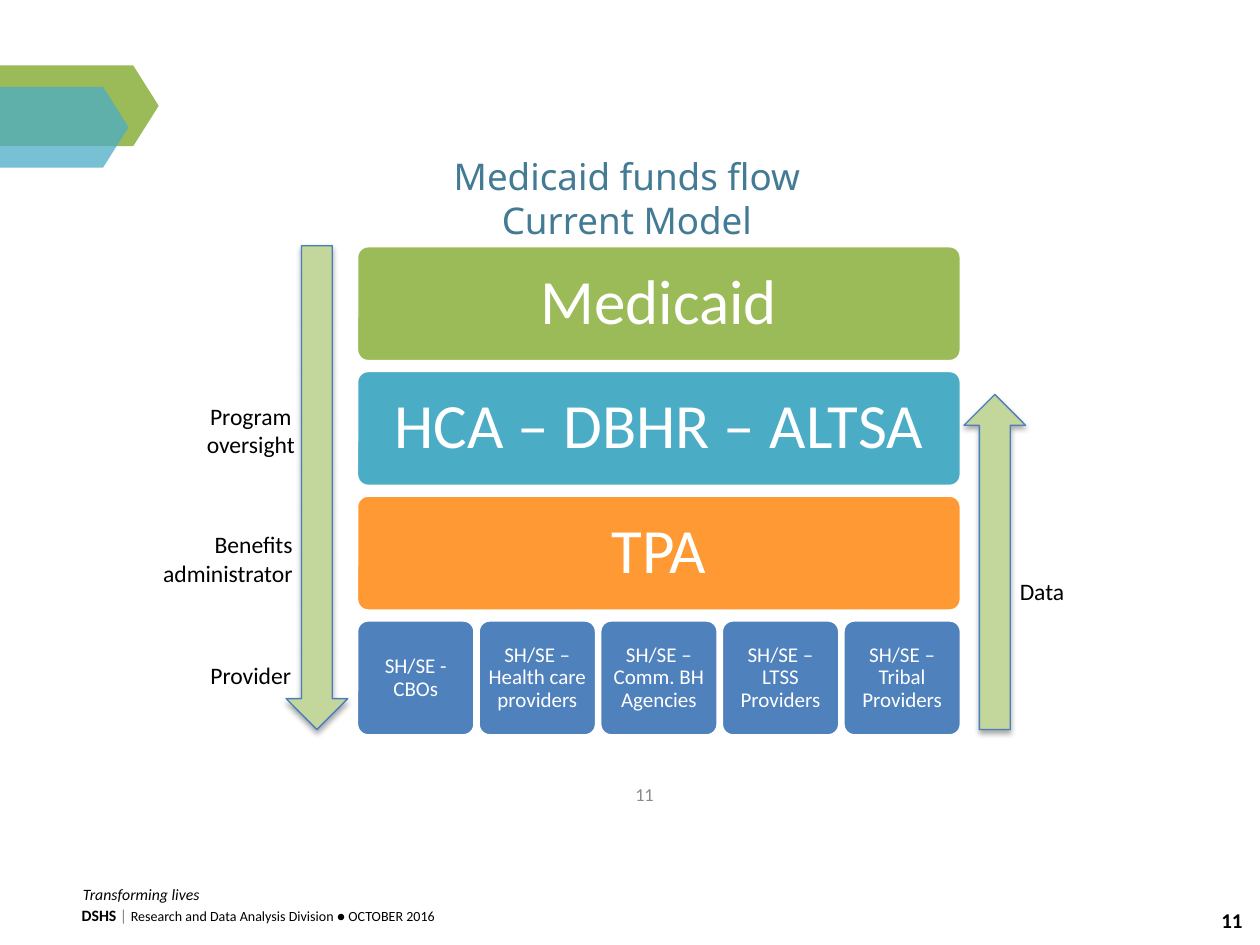
from lxml.etree import SubElement
from pptx import Presentation
from pptx.dml.color import RGBColor
from pptx.enum.shapes import MSO_SHAPE
from pptx.enum.text import MSO_ANCHOR, PP_ALIGN
from pptx.oxml.ns import qn
from pptx.util import Inches, Pt

BLACK, WHITE = "000000", "FFFFFF"
STACK_LEFT, STACK_TOP = 2.83, 1.95
STACK_WIDTH, LEVEL_HEIGHT, LEVEL_STEP = 4.8, 0.92, 0.99
PROVIDER_WIDTH = 0.94

LEVELS = [
    ("Medicaid", "9BBB59"),
    ("HCA – DBHR – ALTSA", "4BACC6"),
    ("TPA", "FF9933"),
]
PROVIDERS = [
    "SH/SE - CBOs",
    "SH/SE – Health care providers",
    "SH/SE – Comm. BH Agencies",
    "SH/SE – LTSS Providers",
    "SH/SE – Tribal Providers",
]


def rgb(color):
    return RGBColor.from_string(color)


def style_font(font, size, color, name="Calibri", bold=False, italic=False):
    font.name = name
    font.size = Pt(size)
    font.color.rgb = rgb(color)
    font.bold = bold
    font.italic = italic


def add_text(slide, box, text, size, color=BLACK, align=PP_ALIGN.LEFT,
             anchor=MSO_ANCHOR.TOP, **font_style):
    frame = slide.shapes.add_textbox(*map(Inches, box)).text_frame
    frame.word_wrap = True
    frame.vertical_anchor = anchor
    paragraph = frame.paragraphs[0]
    paragraph.text = text
    paragraph.alignment = align
    style_font(paragraph.font, size, color, **font_style)


def add_filled_shape(slide, kind, box, fill, line=None, line_width=0.75):
    shape = slide.shapes.add_shape(kind, *map(Inches, box))
    shape.shadow.inherit = False
    shape.fill.solid()
    shape.fill.fore_color.rgb = rgb(fill)
    if line:
        shape.line.color.rgb = rgb(line)
        shape.line.width = Pt(line_width)
    else:
        shape.line.fill.background()
    return shape


def add_block(slide, box, text, fill, size, inset):
    """Add one rounded block of the funding stack."""
    block = add_filled_shape(slide, MSO_SHAPE.ROUNDED_RECTANGLE, box, fill, WHITE, 2)
    block.adjustments[0] = 0.1
    frame = block.text_frame
    frame.word_wrap = True
    frame.vertical_anchor = MSO_ANCHOR.MIDDLE
    frame.margin_left = frame.margin_right = Inches(inset)
    frame.margin_top = frame.margin_bottom = Inches(inset)
    paragraph = frame.paragraphs[0]
    paragraph.text = text
    paragraph.alignment = PP_ALIGN.CENTER
    paragraph.line_spacing = 0.9
    style_font(paragraph.font, size, WHITE)


def add_flow_arrow(slide, box, rotation=0):
    arrow = add_filled_shape(slide, MSO_SHAPE.DOWN_ARROW, box, "C3D69B", "4B7EBC")
    arrow.rotation = rotation
    effects = arrow._element.spPr.find(qn("a:effectLst"))
    shadow = SubElement(effects, qn("a:outerShdw"), blurRad=str(Pt(3.1)),
                        dist=str(Pt(1.8)), dir="5400000", rotWithShape="0")
    shadow_color = SubElement(shadow, qn("a:srgbClr"), val=BLACK)
    SubElement(shadow_color, qn("a:alpha"), val="35000")


def add_pennants(slide):
    pennants = [((0, 0.52, 1.26, 0.64), "9BBB59"), ((0, 0.69, 1.02, 0.64), "4BACC6")]
    for box, fill in pennants:
        pennant = add_filled_shape(slide, MSO_SHAPE.PENTAGON, box, fill)
        pennant.adjustments[0] = 0.315
    front_color = pennant._element.spPr.find(qn("a:solidFill"))[0]
    SubElement(front_color, qn("a:alpha"), val="75000")


def add_footer(slide):
    add_text(slide, (9.03, 7.15, 0.93, 0.3), "11", 12, align=PP_ALIGN.RIGHT, bold=True)
    frame = slide.shapes.add_textbox(*map(Inches, (0.55, 7.14, 8.13, 0.25))).text_frame
    frame.word_wrap = True
    parts = [
        ("DSHS ", 9, BLACK, True),
        ("| ", 9, "808080", False),
        ("Research and Data Analysis Division ● OCTOBER 2016", 8, BLACK, False),
    ]
    for text, size, color, bold in parts:
        run = frame.paragraphs[0].add_run()
        run.text = text
        style_font(run.font, size, color, bold=bold)
    add_text(slide, (0.56, 6.97, 3.59, 0.25), "Transforming lives", 9, italic=True)


def add_stack(slide):
    for row, (name, fill) in enumerate(LEVELS):
        box = (STACK_LEFT, STACK_TOP + row * LEVEL_STEP, STACK_WIDTH, LEVEL_HEIGHT)
        add_block(slide, box, name, fill, 36, 0.15)
    provider_top = STACK_TOP + len(LEVELS) * LEVEL_STEP
    provider_step = (STACK_WIDTH - PROVIDER_WIDTH) / (len(PROVIDERS) - 1)
    for column, provider in enumerate(PROVIDERS):
        box = (STACK_LEFT + column * provider_step, provider_top,
               PROVIDER_WIDTH, LEVEL_HEIGHT)
        add_block(slide, box, provider, "4F81BD", 12, 0.05)


def add_side_labels(slide):
    labels = [
        ("Program oversight", (1.43, 3.14, 1.12, 0.56), PP_ALIGN.CENTER),
        ("Benefits administrator", (1.18, 4.16, 1.24, 0.56), PP_ALIGN.RIGHT),
        ("Provider", (1.43, 5.2, 1.12, 0.33), PP_ALIGN.CENTER),
        ("Data", (7.71, 4.53, 1.12, 0.33), PP_ALIGN.CENTER),
    ]
    for text, box, align in labels:
        add_text(slide, box, text, 13.5, align=align)


def main():
    presentation = Presentation()
    presentation.slide_width = Inches(10)
    presentation.slide_height = Inches(7.5)
    slide = presentation.slides.add_slide(presentation.slide_layouts[6])
    add_footer(slide)
    add_pennants(slide)
    add_flow_arrow(slide, (2.27, 1.95, 0.49, 3.84))
    add_stack(slide)
    add_text(slide, (2.45, 1.17, 5.05, 0.81), "Medicaid funds flow\vCurrent Model", 21,
             "437A94", PP_ALIGN.CENTER, name="Noto Sans")
    add_text(slide, (4.24, 6.15, 1.75, 0.3), "11", 10.5, "898989",
             PP_ALIGN.CENTER, MSO_ANCHOR.MIDDLE)
    add_flow_arrow(slide, (7.65, 3.13, 0.49, 2.66), rotation=180)
    add_side_labels(slide)
    presentation.save("out.pptx")


if __name__ == "__main__":
    main()
